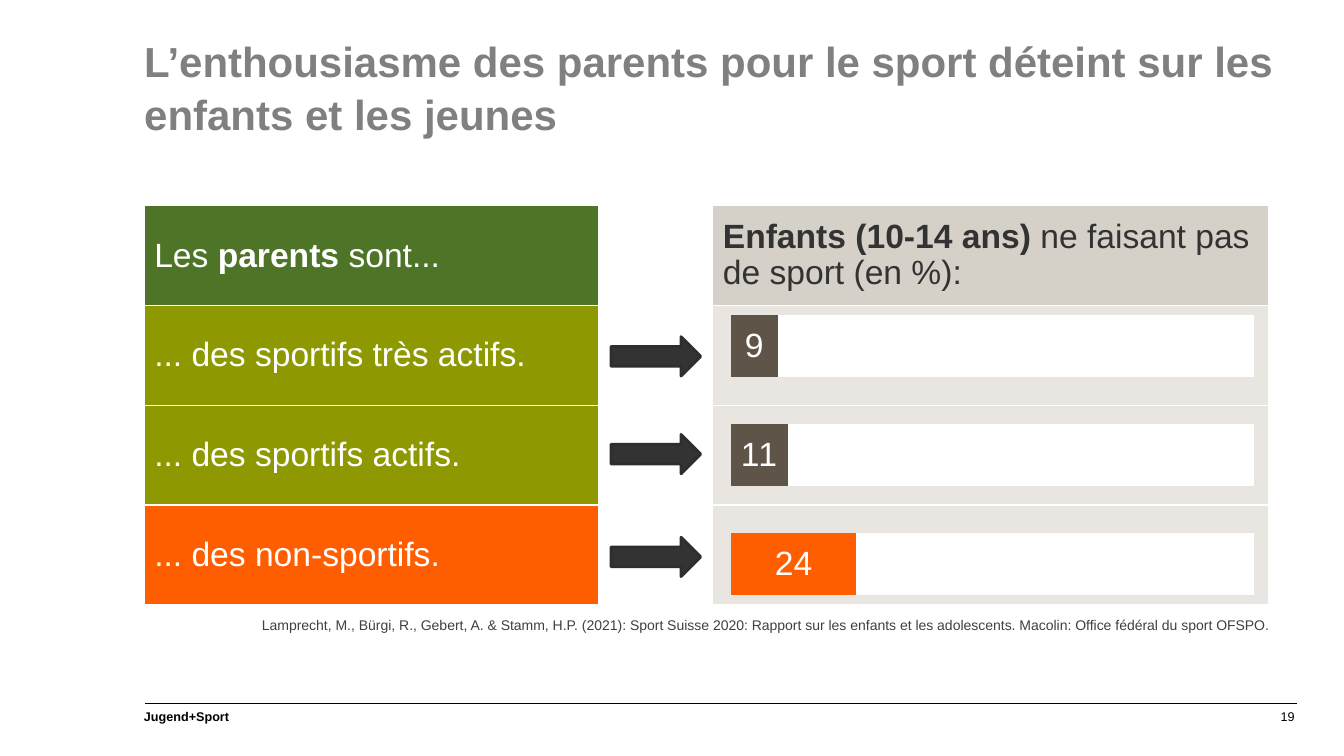
"""Build the slide on how parents' enthusiasm for sport rubs off on their children."""
from dataclasses import dataclass
from lxml.etree import SubElement
from pptx import Presentation
from pptx.chart.data import CategoryChartData
from pptx.dml.color import RGBColor
from pptx.enum.chart import XL_CHART_TYPE, XL_LABEL_POSITION
from pptx.enum.shapes import MSO_CONNECTOR, MSO_SHAPE
from pptx.enum.text import MSO_ANCHOR, PP_ALIGN
from pptx.oxml import parse_xml
from pptx.oxml.ns import nsdecls, qn
from pptx.util import Inches, Pt


@dataclass(frozen=True)
class Theme:
    font: str = "Arial"
    title_size: int = 30
    body_size: int = 24
    source_size: int = 10
    footer_size: int = 9
    white: str = "FFFFFF"
    black: str = "000000"
    title: str = "808080"
    source: str = "404040"
    dark: str = "333333"
    arrow_line: str = "2E2E2E"
    green: str = "4E7428"
    olive: str = "8E9901"
    orange: str = "FF5E00"
    sand: str = "D5D0C8"
    pale: str = "E9E6E2"
    brown: str = "5E5447"


theme = Theme()


def color(name):
    return RGBColor.from_string(getattr(theme, name))


def write(frame, *spans, size, ink, bold=False, align=PP_ALIGN.LEFT, spacing=1.0, margins=None):
    frame.word_wrap = True
    if margins:
        frame.margin_left, frame.margin_top, frame.margin_right, frame.margin_bottom = map(Inches, margins)
    para = frame.paragraphs[0]
    para.alignment = align
    para.line_spacing = spacing
    for position, text in enumerate(spans):
        span = para.add_run()
        span.text = text.strip("*")
        span.font.name = theme.font
        span.font.size = Pt(size)
        span.font.bold = bold or text.startswith("*")
        span.font.color.rgb = color(ink)


deck = Presentation()
deck.slide_width, deck.slide_height = Inches(13.33), Inches(7.5)
page = deck.slides.add_slide(deck.slide_layouts[6])

footer_line = page.shapes.add_connector(
    MSO_CONNECTOR.STRAIGHT, Inches(12.86), Inches(6.98), Inches(1.44), Inches(6.98))
footer_line.line.color.rgb = color("black")
footer_line.line.width = Pt(0.75)
SubElement(footer_line._element.spPr, qn("a:effectLst"))

text_boxes = [
    ((1.43, 0.28, 11.42, 1.14), "L’enthousiasme des parents pour le sport déteint sur les enfants et les jeunes",
     dict(size=theme.title_size, ink="title", bold=True, spacing=1.05, margins=(0, 0.05, 0, 0.05))),
    ((2.23, 6.07, 10.35, 0.27),
     "Lamprecht, M., Bürgi, R., Gebert, A. & Stamm, H.P. (2021): Sport Suisse 2020: "
     "Rapport sur les enfants et les adolescents. Macolin: Office fédéral du sport OFSPO.",
     dict(size=theme.source_size, ink="source", align=PP_ALIGN.RIGHT, margins=(0.1, 0.05, 0, 0.05))),
    ((1.33, 6.98, 5.7, 0.25), "Jugend+Sport", dict(size=theme.footer_size, ink="black", bold=True)),
    ((9.62, 7.03, 3.22, 0.16), "19",
     dict(size=theme.footer_size, ink="black", align=PP_ALIGN.RIGHT, spacing=1.05, margins=(0, 0, 0, 0))),
]
for place, text, style in text_boxes:
    box = page.shapes.add_textbox(*map(Inches, place))
    write(box.text_frame, text, **style)

parent_rows = [
    (("Les ", "*parents ", "sont..."), "green", "sand"),
    (("... des sportifs très actifs.",), "olive", "pale"),
    (("... des sportifs actifs.",), "olive", "pale"),
    (("... des non-sportifs.",), "orange", "pale"),
]
table = page.shapes.add_table(
    len(parent_rows), 3, Inches(1.43), Inches(2.04), Inches(11.15), Inches(3.96)).table
table.first_row = table.horz_banding = False
for column, width in zip(table.columns, (4.51, 1.13, 5.51)):
    column.width = Inches(width)
for row_index, (spans, left_fill, right_fill) in enumerate(parent_rows):
    table.rows[row_index].height = Inches(0.99)
    for column_index, fill in enumerate((left_fill, "white", right_fill)):
        cell = table.cell(row_index, column_index)
        cell.vertical_anchor = MSO_ANCHOR.MIDDLE
        properties = cell._tc.get_or_add_tcPr()
        for side in ("lnL", "lnR", "lnT", "lnB"):
            properties.append(parse_xml(
                f'<a:{side} {nsdecls("a")} w="{Pt(1)}"><a:solidFill>'
                f'<a:srgbClr val="{theme.white}"/></a:solidFill></a:{side}>'))
        cell.fill.solid()
        cell.fill.fore_color.rgb = color(fill)
    write(table.cell(row_index, 0).text_frame, *spans, size=theme.body_size, ink="white")
write(table.cell(0, 2).text_frame, "*Enfants (10-14 ans)", " ne faisant pas de sport (en %):",
      size=theme.body_size, ink="dark", spacing=0.96)

inactive_shares = (9, 11, 24)
chart_data = CategoryChartData()
chart_data.categories = ["1", "2", "3"]
chart_data.add_series("Series 1", inactive_shares)
chart_data.add_series("Series 2", [100 - share for share in inactive_shares])
chart = page.shapes.add_chart(
    XL_CHART_TYPE.BAR_STACKED_100, Inches(7.14), Inches(2.83), Inches(5.41), Inches(3.37), chart_data).chart
chart.has_legend = chart.has_title = False
chart.font.name = theme.font
chart.font.size = Pt(theme.source_size)
chart.font.color.rgb = color("black")
chart.category_axis.reverse_order = True
chart.value_axis.has_major_gridlines = False
chart.category_axis.visible = chart.value_axis.visible = False

plot = chart.plots[0]
plot.gap_width, plot.overlap, plot.vary_by_categories = 75, 100, False
inactive, remainder = plot.series
for series, fill in ((inactive, "orange"), (remainder, "white")):
    series.format.fill.solid()
    series.format.fill.fore_color.rgb = color(fill)
for index, fill in enumerate(("brown", "brown", "orange")):
    point_fill = inactive.points[index].format.fill
    point_fill.solid()
    point_fill.fore_color.rgb = color(fill)
labels = inactive.data_labels
labels.show_value = True
labels.position = XL_LABEL_POSITION.CENTER
labels.font.name = theme.font
labels.font.size = Pt(theme.body_size)
labels.font.color.rgb = color("white")

plot_area = chart._chartSpace.chart.plotArea
for old_layout in plot_area.findall(qn("c:layout")):
    plot_area.remove(old_layout)
plot_area.insert(0, parse_xml(
    f'<c:layout {nsdecls("c")}><c:manualLayout><c:layoutTarget val="inner"/>'
    '<c:xMode val="edge"/><c:yMode val="edge"/><c:x val="0.02"/><c:y val="0.02"/>'
    '<c:w val="0.96"/><c:h val="0.96"/></c:manualLayout></c:layout>'))

for top in (3.34, 4.31, 5.33):
    arrow = page.shapes.add_shape(
        MSO_SHAPE.RIGHT_ARROW, Inches(6.06), Inches(top), Inches(0.89), Inches(0.39))
    arrow.shadow.inherit = False
    arrow.fill.solid()
    arrow.fill.fore_color.rgb = color("dark")
    arrow.line.color.rgb = color("arrow_line")
    arrow.line.width = Pt(2)

deck.save("out.pptx")
